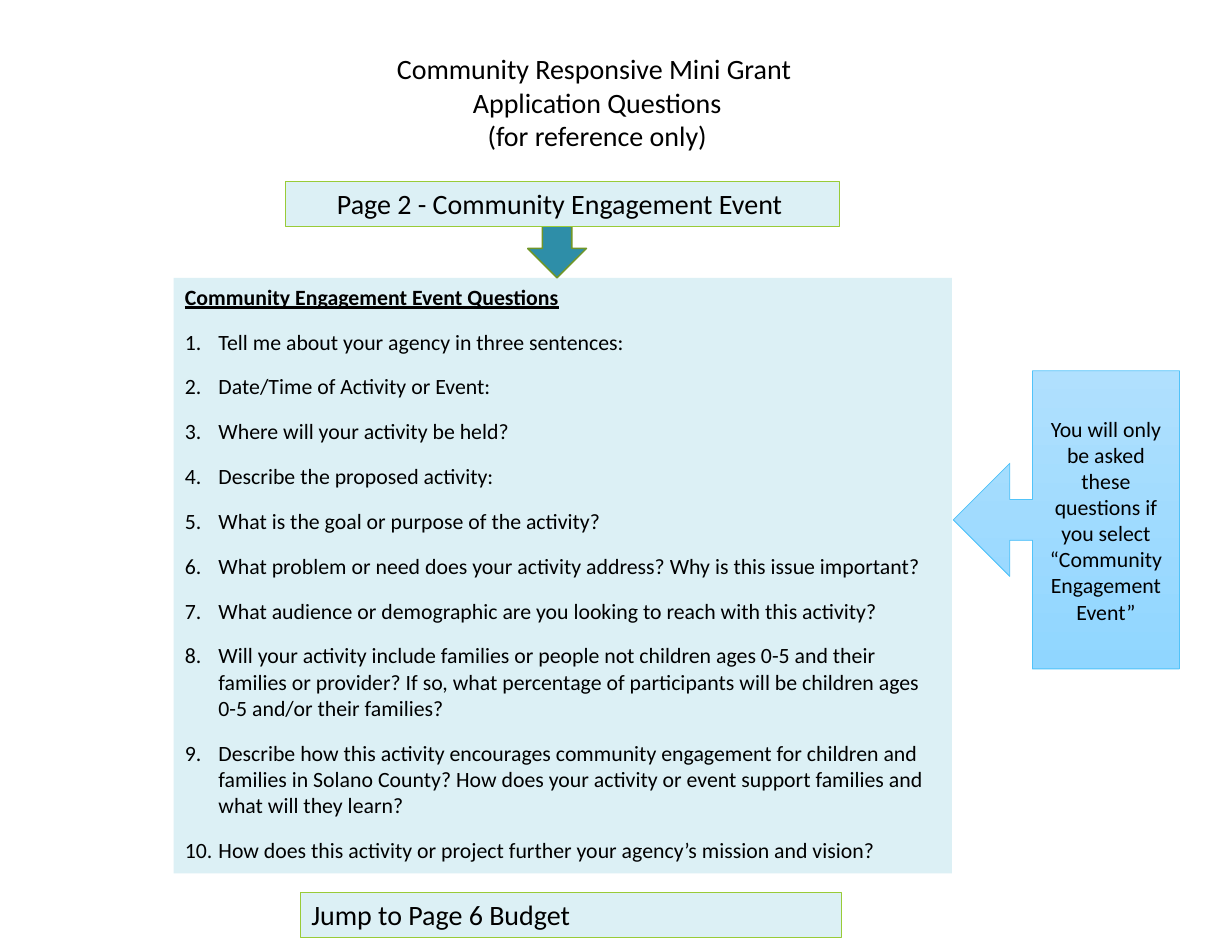
from dataclasses import dataclass

from lxml.etree import SubElement
from pptx import Presentation
from pptx.dml.color import RGBColor as RGB
from pptx.enum.shapes import MSO_SHAPE as SHAPE
from pptx.enum.text import MSO_ANCHOR as ANCHOR, MSO_AUTO_SIZE as AUTO, PP_ALIGN as ALIGN
from pptx.oxml.ns import qn
from pptx.util import Cm, Pt


@dataclass(frozen=True)
class Theme:
    font: str = "Calibri"
    text: RGB = RGB(0x00, 0x00, 0x00)
    panel: RGB = RGB(0xDC, 0xF0, 0xF5)
    border: RGB = RGB(0x99, 0xCB, 0x38)
    arrow: RGB = RGB(0x2E, 0x8E, 0xA8)
    arrow_line: RGB = RGB(0x71, 0x96, 0x29)
    note_top: RGB = RGB(0xB0, 0xE0, 0xFE)
    note_bottom: RGB = RGB(0x90, 0xD6, 0xFF)
    note_line: RGB = RGB(0x51, 0xC3, 0xF9)
    large: Pt = Pt(18)
    small: Pt = Pt(14)


T = Theme()

TITLE = ["Community Responsive Mini Grant ", "Application Questions", "(for reference only)"]
HEADING = "Community Engagement Event Questions"
QUESTIONS = [
    "Tell me about your agency in three sentences:",
    "Date/Time of Activity or Event:",
    "Where will your activity be held?",
    "Describe the proposed activity:",
    "What is the goal or purpose of the activity?",
    "What problem or need does your activity address? Why is this issue important?",
    "What audience or demographic are you looking to reach with this activity?",
    "Will your activity include families or people not children ages 0-5 and their families "
    "or provider? If so, what percentage of participants will be children ages 0-5 and/or "
    "their families?",
    "Describe how this activity encourages community engagement for children and families in "
    "Solano County? How does your activity or event support families and what will they learn?",
    "How does this activity or project further your agency’s mission and vision?",
]
NOTE = "You will only be asked these questions if you select “Community Engagement Event”"


def apply(obj, values):
    for name, value in values.items():
        setattr(obj, name, value)


def place(sp, box):
    apply(sp, dict(zip(("left", "top", "width", "height"), map(Cm, box))))


def write(sp, lines, size, align=ALIGN.LEFT, gap=0, anchor=ANCHOR.TOP):
    tf = sp.text_frame
    apply(tf, {"word_wrap": True, "auto_size": AUTO.NONE, "vertical_anchor": anchor})
    for i, line in enumerate(lines):
        p = tf.add_paragraph() if i else tf.paragraphs[0]
        apply(p, {"alignment": align, "space_before": Pt(gap), "space_after": Pt(gap)})
        r = p.add_run()
        r.text = line
        apply(r.font, {"name": T.font, "size": size})
        r.font.color.rgb = T.text
    return tf


def fill_solid(sp, color):
    sp.fill.solid()
    sp.fill.fore_color.rgb = color


def add_shape(s, kind, box, line, width):
    sp = s.shapes.add_shape(kind, *map(Cm, box))
    sp.shadow.inherit = False
    sp.line.color.rgb = line
    sp.line.width = Pt(width)
    return sp


def title(s, box):
    sp = s.shapes.title
    place(sp, box)
    write(sp, TITLE, T.large, ALIGN.CENTER)


def question_panel(s, box):
    sp = s.placeholders[1]
    place(sp, box)
    fill_solid(sp, T.panel)
    tf = write(sp, [HEADING, *QUESTIONS], T.small, gap=6)
    head, *items = tf.paragraphs
    apply(head.runs[0].font, {"bold": True, "underline": True})
    for p, indent in [(head, 0), *((p, Cm(0.76)) for p in items)]:
        pPr = p._p.get_or_add_pPr()
        pPr.set("marL", str(indent))
        pPr.set("indent", str(-indent))
        if indent:
            SubElement(pPr, qn("a:buFont"), typeface="+mj-lt")
            SubElement(pPr, qn("a:buAutoNum"), type="arabicPeriod")
        else:
            SubElement(pPr, qn("a:buNone"))


def down_arrow(s, box):
    sp = add_shape(s, SHAPE.DOWN_ARROW, box, T.arrow_line, 1)
    fill_solid(sp, T.arrow)


def banner(s, box, text, align):
    sp = add_shape(s, SHAPE.RECTANGLE, box, T.border, 0.75)
    fill_solid(sp, T.panel)
    write(sp, [text], T.large, align, gap=6)


def side_note(s, box):
    sp = add_shape(s, SHAPE.LEFT_ARROW_CALLOUT, box, T.note_line, 0.5)
    for i, value in enumerate((0.18, 0.25, 0.25, 0.65)):
        sp.adjustments[i] = value
    sp.fill.gradient()
    sp.fill.gradient_angle = 270
    for stop, color in zip(sp.fill.gradient_stops, (T.note_top, T.note_bottom)):
        stop.color.rgb = color
    write(sp, [NOTE], T.small, ALIGN.CENTER, anchor=ANCHOR.MIDDLE)


def main():
    prs = Presentation()
    apply(prs, {"slide_width": Cm(27.94), "slide_height": Cm(21.59)})
    s = prs.slides.add_slide(prs.slide_layouts[1])
    question_panel(s, (3.94, 6.3, 17.65, 13.51))
    title(s, (7.26, 1.04, 12.57, 2.57))
    down_arrow(s, (11.97, 4.95, 1.33, 1.35))
    banner(s, (6.48, 4.11, 12.57, 1.02), "Page 2 - Community Engagement Event ", ALIGN.CENTER)
    side_note(s, (21.62, 8.41, 5.13, 6.76))
    banner(s, (6.81, 20.24, 12.27, 1.02), "Jump to Page 6 Budget", ALIGN.LEFT)
    prs.save("out.pptx")


if __name__ == "__main__":
    main()
